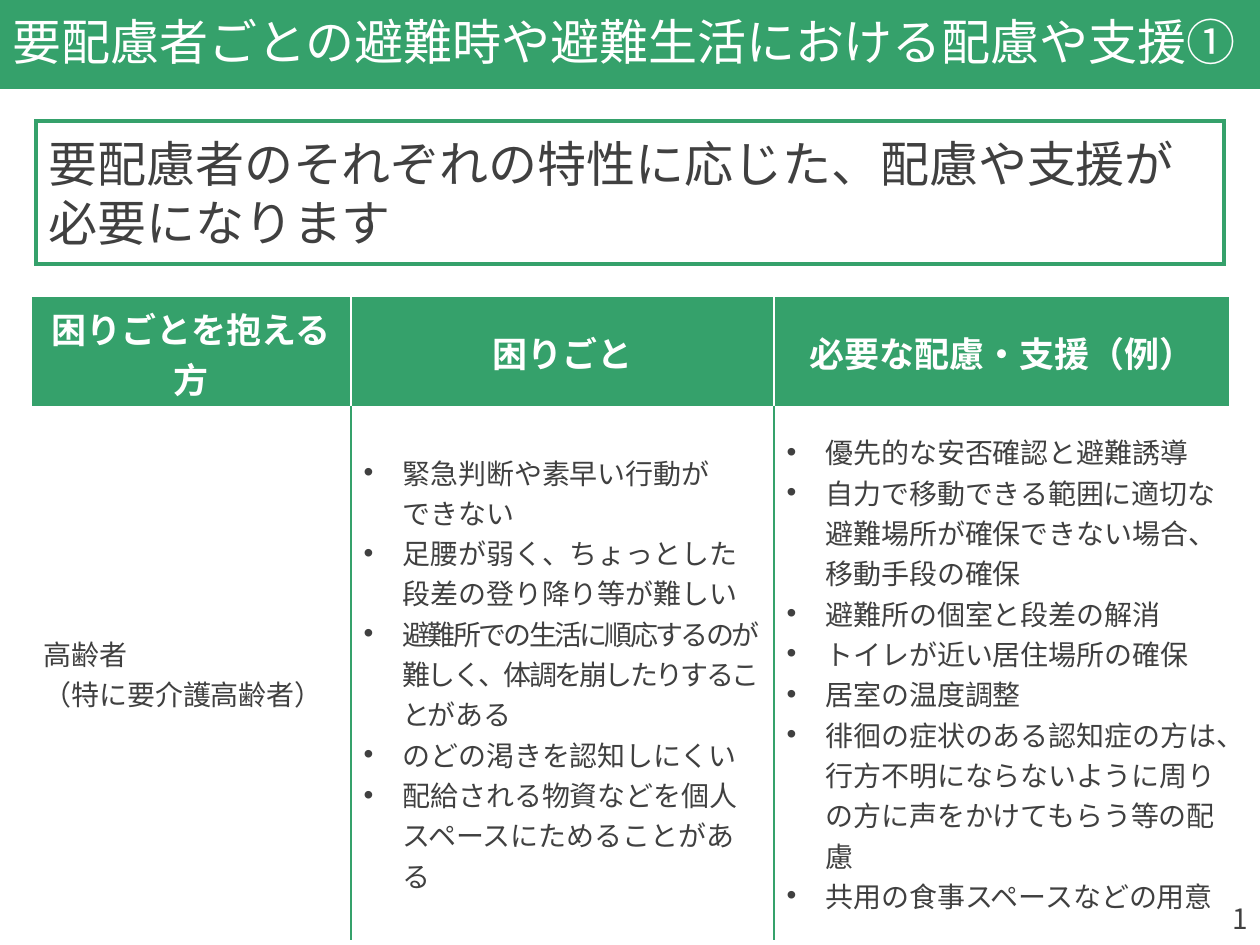
import pptx
import pptx.dml.color
import pptx.enum.shapes
import pptx.enum.text
import pptx.oxml
import pptx.oxml.ns
import pptx.util
from lxml import etree

GREEN = pptx.dml.color.RGBColor(0x35, 0xA1, 0x6B)
INK = pptx.dml.color.RGBColor(0x40, 0x40, 0x40)
WHITE = pptx.dml.color.RGBColor(0xFF, 0xFF, 0xFF)
ALIGN = pptx.enum.text.PP_ALIGN
MIDDLE = pptx.enum.text.MSO_ANCHOR.MIDDLE

COLUMN_WIDTHS = [320, 423, 456]
ROW_HEIGHTS = [112, 531]
HEADINGS = ["困りごとを抱える方", "困りごと", "必要な配慮・支援（例）"]
PEOPLE = ["高齢者", "（特に要介護高齢者）"]
# A tuple holds a tightly spaced run followed by a normal one.
TROUBLES = [
    "緊急判断や素早い行動が\nできない",
    "足腰が弱く、ちょっとした段差の登り降り等が難しい",
    ("避難所での生活に順応するのが難しく、体調を崩したりすることが", "ある"),
    "のどの渇きを認知しにくい",
    "配給される物資などを個人\nスペースにためることがある",
]
SUPPORTS = [
    "優先的な安否確認と避難誘導",
    "自力で移動できる範囲に適切な避難場所が確保できない場合、移動手段の確保",
    "避難所の個室と段差の解消",
    "トイレが近い居住場所の確保",
    "居室の温度調整",
    "徘徊の症状のある認知症の方は、行方不明にならないように周りの方に声をかけてもらう等の配慮",
    "共用の食事スペースなどの用意",
]


def px(length):
    return pptx.util.Emu(length * 914400 // 126)


def add_child(parent, tag, **attributes):
    return etree.SubElement(parent, pptx.oxml.ns.qn(tag), attributes)


class SlideWriter:
    font_name = "Noto Sans CJK JP"
    bullet_indent = 39

    def __init__(self, slide):
        self.slide = slide

    def style(self, para, size, color, align=ALIGN.LEFT, bold=False):
        para.alignment = align
        para.font.name = self.font_name
        para.font.size = pptx.util.Pt(size)
        para.font.bold = bold
        para.font.color.rgb = color
        defaults = para._p.pPr.find(pptx.oxml.ns.qn("a:defRPr"))
        add_child(defaults, "a:ea", typeface=self.font_name)

    def bullet(self, para):
        properties = para._p.get_or_add_pPr()
        properties.set("marL", str(px(self.bullet_indent)))
        properties.set("indent", str(-px(self.bullet_indent)))
        add_child(properties, "a:buFont", typeface="Arial")
        add_child(properties, "a:buChar", char="•")

    def title(self, text, left, top, width, height):
        title = self.slide.shapes.title
        title.left, title.top = px(left), px(top)
        title.width, title.height = px(width), px(height)
        title.fill.solid()
        title.fill.fore_color.rgb = GREEN
        frame = title.text_frame
        frame.auto_size = pptx.enum.text.MSO_AUTO_SIZE.NONE
        frame.vertical_anchor = MIDDLE
        para = frame.paragraphs[0]
        para.text = text
        para.line_spacing = 0.9
        self.style(para, 28, WHITE)

    def framed_box(self, text, left, top, width, height):
        box = self.slide.shapes.add_shape(
            pptx.enum.shapes.MSO_SHAPE.RECTANGLE,
            px(left), px(top), px(width), px(height))
        box.shadow.inherit = False
        box.fill.solid()
        box.fill.fore_color.rgb = WHITE
        box.line.color.rgb = GREEN
        box.line.width = pptx.util.Pt(2.25)
        outline = box._element.spPr.find(pptx.oxml.ns.qn("a:ln"))
        add_child(outline, "a:miter", lim="800000")
        box.text_frame.word_wrap = True
        box.text_frame.vertical_anchor = MIDDLE
        para = box.text_frame.paragraphs[0]
        para.text = text
        self.style(para, 28, INK)

    def page_number(self, left, top, width, height):
        box = self.slide.shapes.add_textbox(
            px(left), px(top), px(width), px(height))
        box.text_frame.word_wrap = True
        para = box.text_frame.paragraphs[0]
        self.style(para, 16, INK, ALIGN.RIGHT)
        field = add_child(para._p, "a:fld", type="slidenum",
                          id="{B6F15528-21DE-4FAA-801E-634DDDAF4B2B}")
        add_child(field, "a:rPr", lang="ja-JP")
        add_child(field, "a:t").text = "1"

    def table(self, left, top, widths, heights):
        table = self.slide.shapes.add_table(
            len(heights), len(widths), px(left), px(top),
            px(sum(widths)), px(sum(heights))).table
        table.horz_banding = False
        for column, width in zip(table.columns, widths):
            column.width = px(width)
        for row, height in zip(table.rows, heights):
            row.height = px(height)
        return table

    def cell(self, cell, fill, borders):
        """Borders map the sides L, R, T, B, in that order, to (colour, points)."""
        properties = cell._tc.get_or_add_tcPr()
        for side, (color, points) in borders.items():
            line = add_child(properties, "a:ln" + side,
                             w=str(pptx.util.Pt(points)))
            solid = add_child(line, "a:solidFill")
            add_child(solid, "a:srgbClr", val=str(color))
        cell.fill.solid()
        cell.fill.fore_color.rgb = fill
        cell.vertical_anchor = MIDDLE

    def cell_text(self, cell, items, bulleted=False, **style):
        frame = cell.text_frame
        for index, item in enumerate(items):
            para = frame.add_paragraph() if index else frame.paragraphs[0]
            if isinstance(item, tuple):
                for text in item:
                    para.add_run().text = text
                para.runs[0]._r.get_or_add_rPr().set("spc", "-150")
            else:
                para.text = item
            if bulleted:
                self.bullet(para)
            self.style(para, **style)


def main():
    deck = pptx.Presentation()
    deck.slide_width, deck.slide_height = px(1260), px(945)
    writer = SlideWriter(deck.slides.add_slide(deck.slide_layouts[5]))

    writer.page_number(976, 895, 284, 50)
    writer.title("要配慮者ごとの避難時や避難生活における配慮や支援①", 0, 0, 1260, 89)

    table = writer.table(31, 296, COLUMN_WIDTHS, ROW_HEIGHTS)
    last = len(COLUMN_WIDTHS) - 1
    white_line, green_line = (WHITE, 1), (GREEN, 1)
    for column, (heading, items) in enumerate(
            zip(HEADINGS, [PEOPLE, TROUBLES, SUPPORTS])):
        head, body = table.cell(0, column), table.cell(1, column)
        writer.cell(head, GREEN, {"L": white_line, "R": white_line,
                                  "T": white_line, "B": (WHITE, 3)})
        writer.cell_text(head, [heading], size=20, color=WHITE,
                         align=ALIGN.CENTER, bold=True)
        writer.cell(body, WHITE, {
            "L": green_line if column > 0 else white_line,
            "R": green_line if column < last else white_line,
            "T": white_line, "B": white_line})
        writer.cell_text(body, items, bulleted=column > 0, size=16, color=INK)

    writer.framed_box("要配慮者のそれぞれの特性に応じた、配慮や支援が\n必要になります",
                      36, 121, 1188, 143)
    deck.save("out.pptx")


if __name__ == "__main__":
    main()
